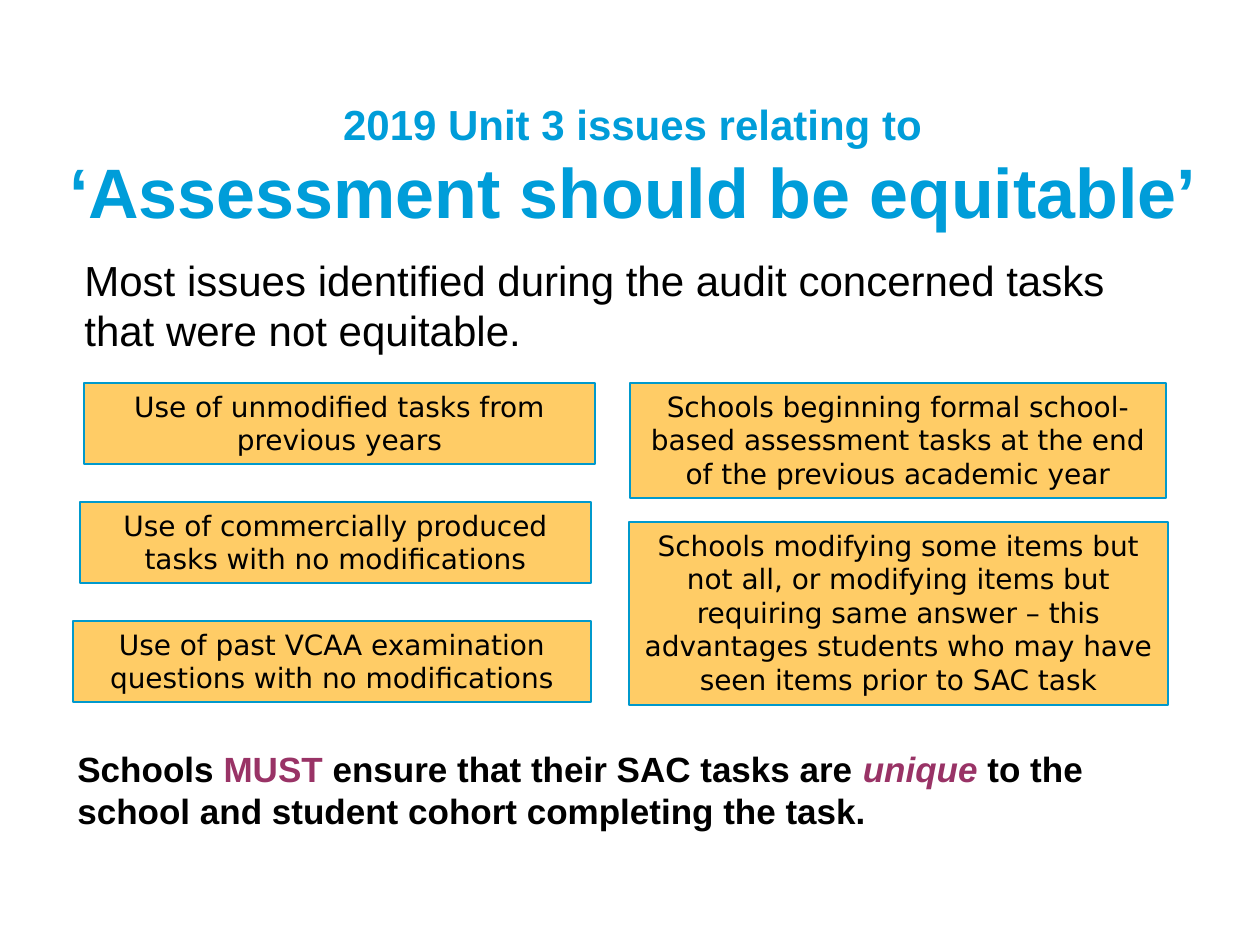
"""Build the slide on audit issues about equitable assessment."""
from pptx import Presentation
from pptx import util as u
from pptx.dml.color import RGBColor
from pptx.enum import shapes, text

PX = 914400 / 126
TITLE_BLUE = RGBColor(0x00, 0x9D, 0xD9)
BORDER_BLUE = RGBColor(0x00, 0x99, 0xCC)
AMBER = RGBColor(0xFF, 0xCC, 0x66)
PLUM = RGBColor(0x99, 0x33, 0x66)
BLACK = RGBColor(0x00, 0x00, 0x00)


def px(*lengths):
    return [u.Emu(round(length * PX)) for length in lengths]


def add_text(left, top, width, height, size, color, bold=False):
    frame = slide.shapes.add_textbox(*px(left, top, width, height)).text_frame
    frame.word_wrap = True
    paragraph = frame.paragraphs[0]
    paragraph.font.name = "Arial"
    paragraph.font.size = u.Pt(size)
    paragraph.font.bold = bold
    paragraph.font.color.rgb = color
    return frame, paragraph


presentation = Presentation()
presentation.slide_width, presentation.slide_height = px(1260, 945)
slide = presentation.slides.add_slide(presentation.slide_layouts[6])

title_frame, title = add_text(10, 87, 1245, 157, 40, TITLE_BLUE, bold=True)
title_frame.vertical_anchor = text.MSO_ANCHOR.MIDDLE
title.alignment = text.PP_ALIGN.CENTER
lead_in = title.add_run()
lead_in.text = "2019 Unit 3 issues relating to"
lead_in.font.size = u.Pt(24)
title.add_line_break()
title.add_run().text = "‘Assessment should be equitable’"

_, summary = add_text(72, 248, 1114, 122, 24, BLACK)
summary.add_run().text = "Most issues identified during the audit concerned tasks that were not equitable."

issues = [
    (84, 383, 511, 81, "Use of unmodified tasks from previous years"),
    (80, 502, 511, 81, "Use of commercially produced tasks with no modifications"),
    (73, 621, 518, 81, "Use of past VCAA examination questions with no modifications"),
    (630, 383, 536, 115, "Schools beginning formal school-based assessment tasks "
     "at the end of the previous academic year"),
    (629, 522, 539, 183, "Schools modifying some items but not all, or modifying items but "
     "requiring same answer – this advantages students who may have seen items prior to SAC task"),
]
for left, top, width, height, issue in issues:
    shape = slide.shapes.add_shape(shapes.MSO_SHAPE.RECTANGLE, *px(left, top, width, height))
    shape.shadow.inherit = False
    shape.fill.solid()
    shape.fill.fore_color.rgb = AMBER
    shape.line.color.rgb = BORDER_BLUE
    shape.line.width = u.Pt(0.75)
    frame = shape.text_frame
    frame.text = issue
    frame.word_wrap = True
    frame.auto_size = text.MSO_AUTO_SIZE.SHAPE_TO_FIT_TEXT
    frame.vertical_anchor = text.MSO_ANCHOR.TOP
    paragraph = frame.paragraphs[0]
    paragraph.alignment = text.PP_ALIGN.CENTER
    paragraph.font.name = "DejaVu Sans"
    paragraph.font.size = u.Pt(16)
    paragraph.font.color.rgb = BLACK

_, reminder = add_text(65, 741, 1114, 122, 20, BLACK, bold=True)
for words, color, italic in [
    ("Schools ", BLACK, False),
    ("MUST", PLUM, False),
    (" ensure that their SAC tasks are ", BLACK, False),
    ("unique", PLUM, True),
    (" to the school and student cohort completing the task.", BLACK, False),
]:
    run = reminder.add_run()
    run.text = words
    run.font.color.rgb = color
    run.font.italic = italic

presentation.save("out.pptx")
